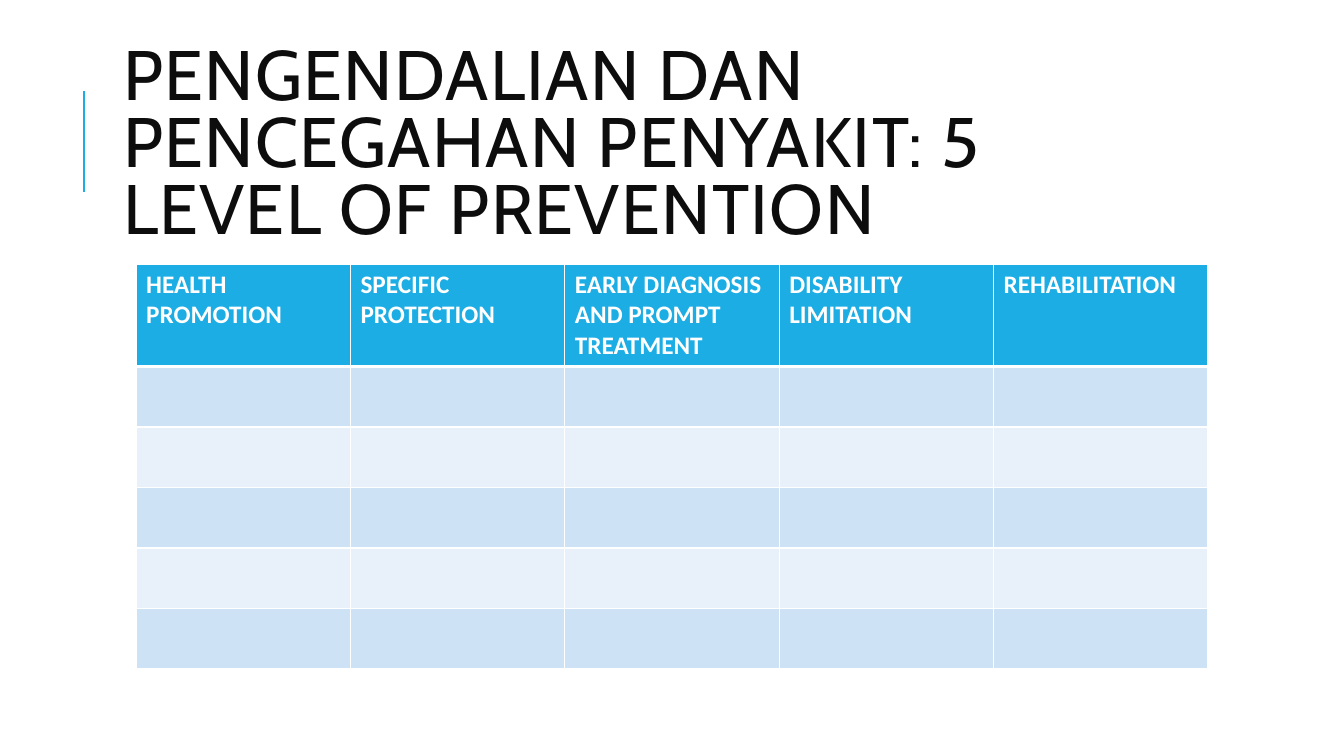
"""Build the slide on the five levels of prevention."""
from dataclasses import dataclass

from lxml import etree
from pptx import Presentation
from pptx.dml.color import RGBColor
from pptx.enum.shapes import MSO_CONNECTOR
from pptx.enum.text import MSO_ANCHOR, MSO_AUTO_SIZE, PP_ALIGN
from pptx.oxml.ns import qn
from pptx.util import Inches, Pt

STRAIGHT = MSO_CONNECTOR.STRAIGHT
MIDDLE = MSO_ANCHOR.MIDDLE
NO_AUTOFIT = MSO_AUTO_SIZE.NONE
LEFT = PP_ALIGN.LEFT

TITLE_ONLY = 5
GRID_COLUMNS, GRID_ROWS = 13.33, 7.5
UNIT = Inches(1)
ACCENT, WHITE, INK = "1CADE4", "FFFFFF", "0D0D0D"
BANDS = ("CDE3F5", "E8F1FA")
BODY_ROWS = 5
HEADER_HEIGHT, BODY_HEIGHT = 0.41, 0.6
TITLE = "PENGENDALIAN DAN PENCEGAHAN PENYAKIT: 5 LEVEL OF PREVENTION"
LEVELS = (
    "HEALTH PROMOTION",
    "SPECIFIC PROTECTION",
    "EARLY DIAGNOSIS AND PROMPT TREATMENT",
    "DISABILITY LIMITATION",
    "REHABILITATION",
)
TITLE_FONT = {"name": "Cabin", "size": Pt(50), "bold": False}
HEADER_FONT = {"name": "Calibri", "size": Pt(18), "bold": True}


@dataclass(frozen=True)
class Area:
    """A region in grid columns and rows."""

    column: float
    row: float
    columns: float
    rows: float

    def lengths(self) -> dict:
        """Return the region as position and size attributes."""
        return {
            "left": int(self.column * UNIT),
            "top": int(self.row * UNIT),
            "width": int(self.columns * UNIT),
            "height": int(self.rows * UNIT),
        }


TITLE_AREA = Area(1.12, 0.64, 10.63, 1.64)
TABLE_AREA = Area(1.35, 2.62, 10.63, HEADER_HEIGHT + BODY_ROWS * BODY_HEIGHT)
ACCENT_AREA = Area(0.83, 0.9, 0, 1)


def color(value: str) -> RGBColor:
    """Turn a hex string into a colour."""
    return RGBColor.from_string(value)


def apply(target, values: dict) -> None:
    """Set every attribute named in the values."""
    for name, value in values.items():
        setattr(target, name, value)


def write(para, text: str, font: dict, ink: str):
    """Add one formatted span to a paragraph."""
    span = para.add_run()
    span.text = text
    apply(span.font, font)
    span.font.color.rgb = color(ink)
    return span


def add_title(page) -> None:
    """Place and format the title placeholder."""
    box = page.shapes.title
    apply(box, TITLE_AREA.lengths())
    apply(box.text_frame, {"word_wrap": True, "auto_size": NO_AUTOFIT, "vertical_anchor": MIDDLE})
    para = box.text_frame.paragraphs[0]
    apply(para, {"alignment": LEFT, "line_spacing": 0.8})
    span = write(para, TITLE, TITLE_FONT, INK)
    span.font._element.set("spc", "100")


def add_accent_line(page) -> None:
    """Draw the upright line beside the title."""
    area = ACCENT_AREA.lengths()
    left, top = area["left"], area["top"]
    line = page.shapes.add_connector(STRAIGHT, left, top + area["height"], left, top)
    line.line.width = Pt(1.5)
    line.line.color.rgb = color(ACCENT)
    etree.SubElement(line._element.spPr, qn("a:effectLst"))


def style_cell(cell, fill: str, widths: dict) -> None:
    """Give a cell white borders and a solid fill."""
    properties = cell._tc.get_or_add_tcPr()
    for side, width in widths.items():
        border = etree.SubElement(properties, qn(f"a:ln{side}"), w=str(Pt(width)))
        solid = etree.SubElement(border, qn("a:solidFill"))
        etree.SubElement(solid, qn("a:srgbClr"), val=WHITE)
    cell.fill.solid()
    cell.fill.fore_color.rgb = color(fill)


def add_levels_table(page) -> None:
    """Add the table with one column for each level."""
    frame = page.shapes.add_table(BODY_ROWS + 1, len(LEVELS), **TABLE_AREA.lengths())
    table = frame.table
    for index, row in enumerate(table.rows):
        header = index == 0
        row.height = int((HEADER_HEIGHT if header else BODY_HEIGHT) * UNIT)
        fill = ACCENT if header else BANDS[(index - 1) % len(BANDS)]
        widths = {"L": 1, "R": 1, "T": 3 if index == 1 else 1, "B": 3 if header else 1}
        for cell in row.cells:
            style_cell(cell, fill, widths)
    for cell, level in zip(table.rows[0].cells, LEVELS):
        write(cell.text_frame.paragraphs[0], level, HEADER_FONT, WHITE)


def main() -> None:
    """Build and save the deck."""
    deck = Presentation()
    deck.slide_width = int(GRID_COLUMNS * UNIT)
    deck.slide_height = int(GRID_ROWS * UNIT)
    page = deck.slides.add_slide(deck.slide_layouts[TITLE_ONLY])
    add_accent_line(page)
    add_title(page)
    add_levels_table(page)
    deck.save("out.pptx")


if __name__ == "__main__":
    main()
